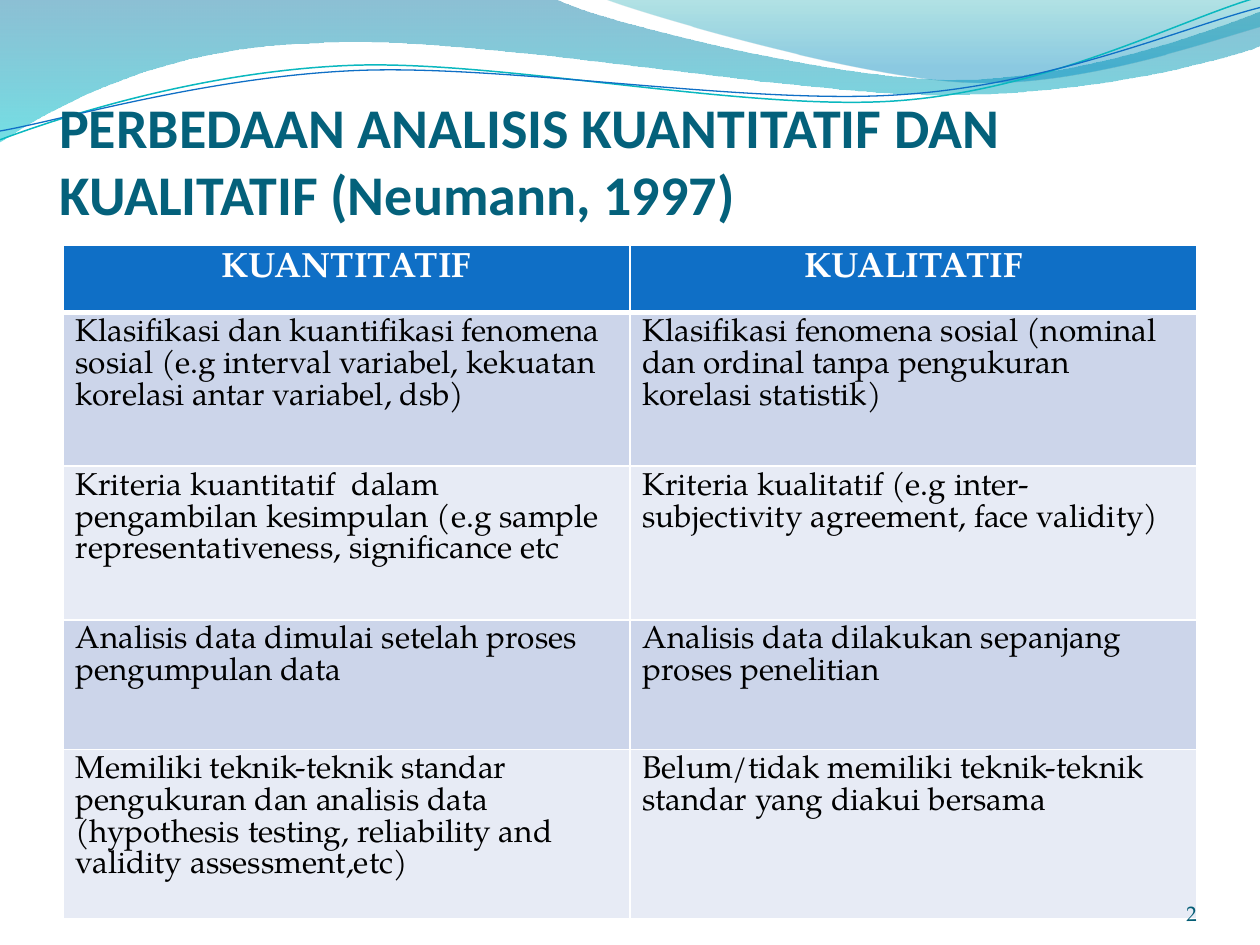
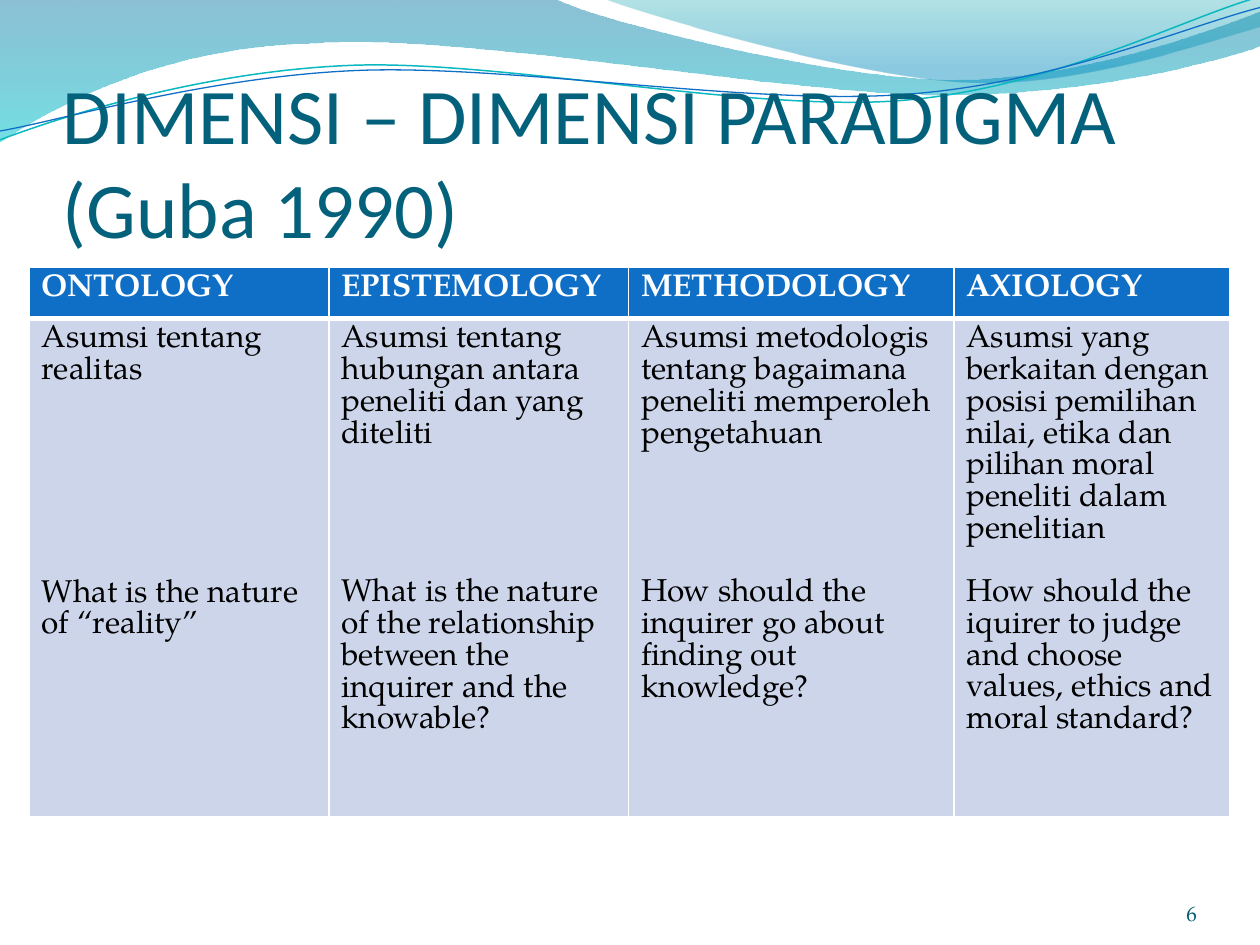
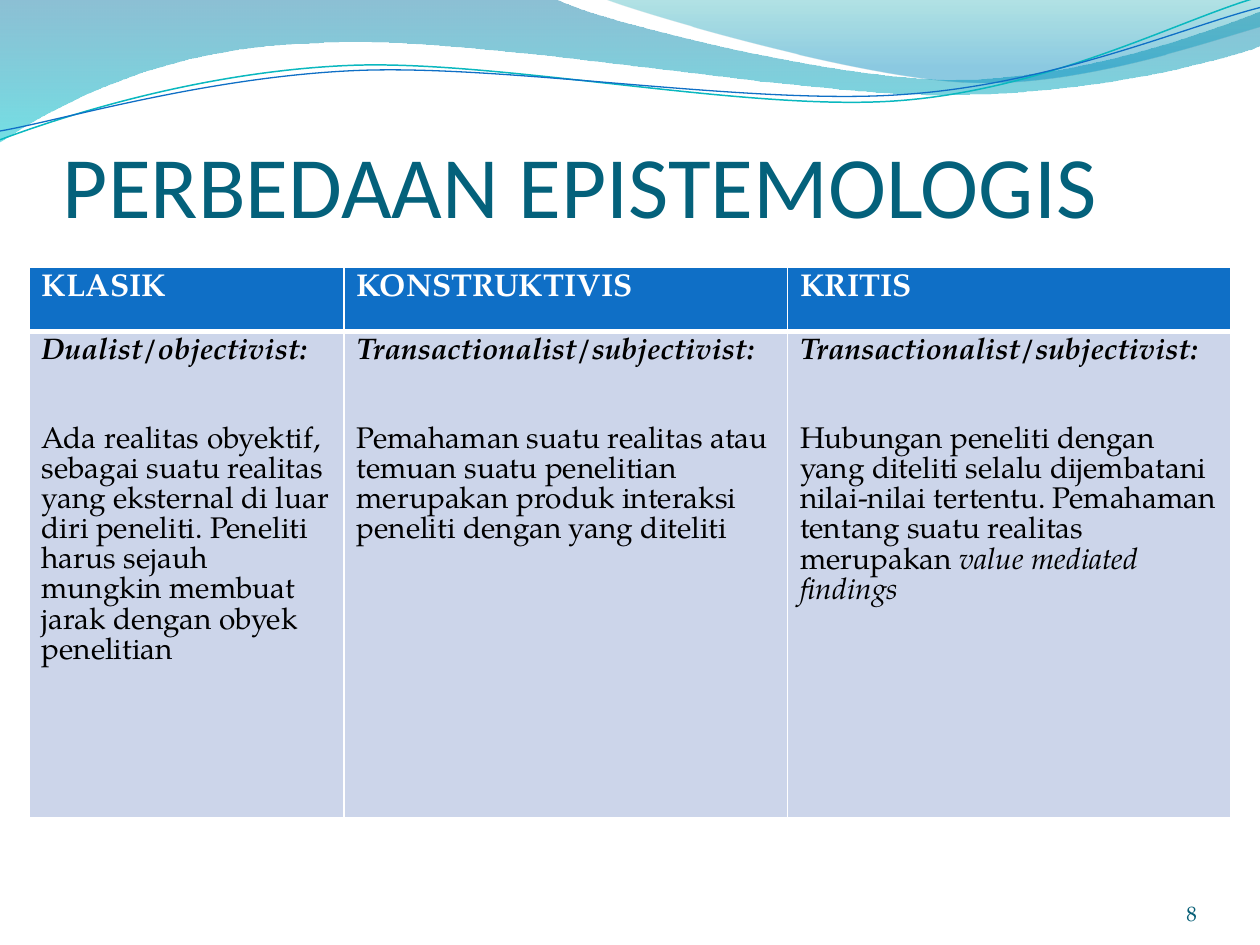
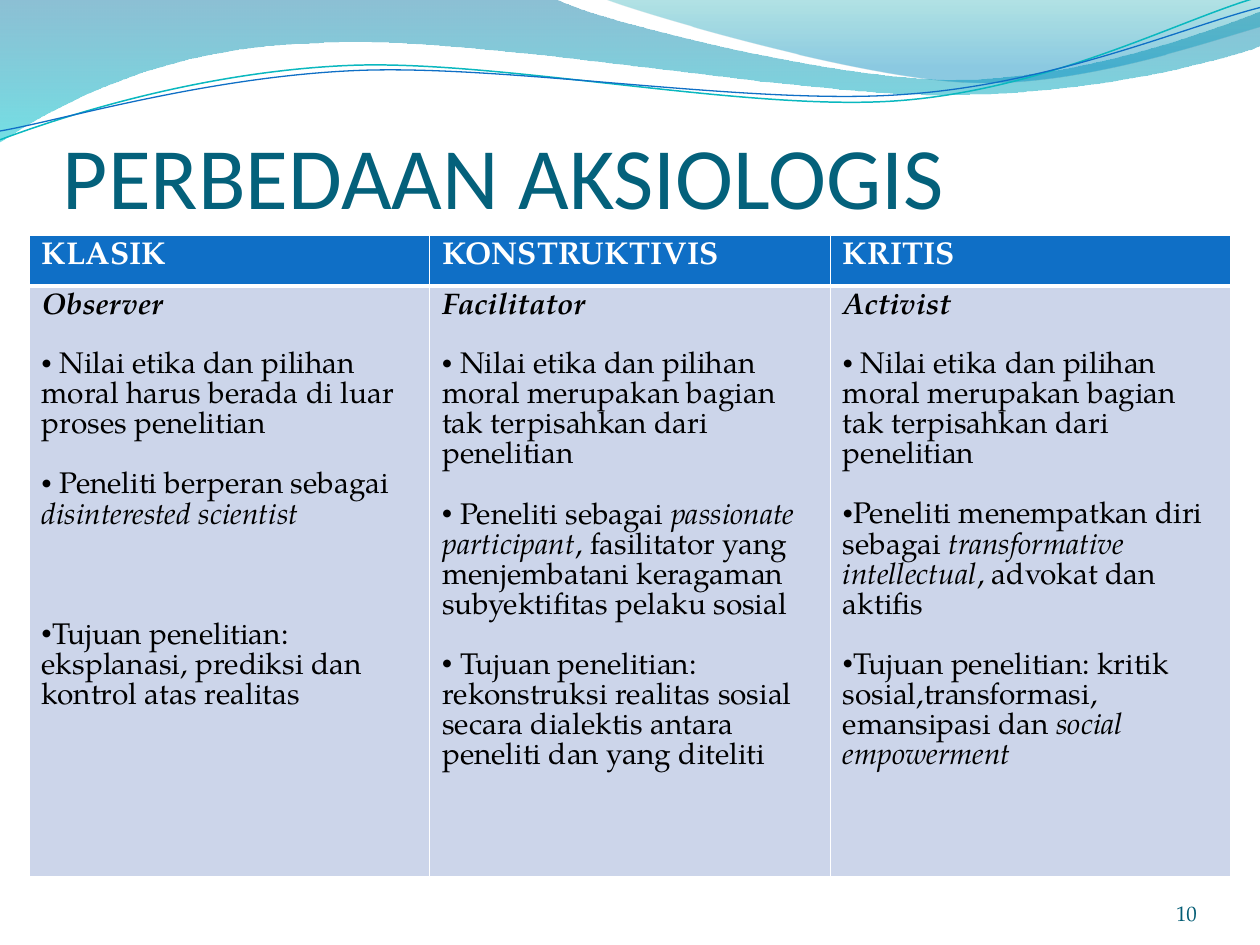
import dataclasses
import itertools

import lxml.etree
import pptx
import pptx.dml.color
import pptx.enum.text
import pptx.oxml.ns
import pptx.util

Inches = pptx.util.Inches
Pt = pptx.util.Pt
qn = pptx.oxml.ns.qn
ANCHOR_BOTTOM = pptx.enum.text.MSO_ANCHOR.BOTTOM
ALIGN = pptx.enum.text.PP_ALIGN


@dataclasses.dataclass(frozen=True)
class Theme:
    title_font: str = "Calibri"
    body_font: str = "TeX Gyre Pagella"
    bullet_font: str = "OpenSymbol"
    title_color: str = "04617B"
    number_color: str = "045D75"
    header_fill: str = "0F6FC6"
    band_fills: tuple = ("CCD5EA", "E7EBF5")
    white: str = "FFFFFF"
    black: str = "000000"
    teal_line: str = "0AB8BF"
    blue_line: str = "0F6FC6"
    wave_gradient: tuple = (("0074A1", 0, 45), ("00C6CF", 1, 55))
    crest_gradient: tuple = (("00A1A9", 0, 30), ("008BBF", 0.8, 45))
    number_size: int = 12
    body_size: int = 18
    dense_size: int = 17
    line_height: float = 1.01
    thin_border: int = 1
    thick_border: int = 3


@dataclasses.dataclass(frozen=True)
class Entry:
    text: str
    lines_before: int = 0
    bullet: bool = False
    lead: bool = False


WAVE = [
    [(0, 0)],
    [(4.4, -0.01)],
    [(4.76, 0.17), (6.64, 0.63), (7.58, 0.63)],
    [(8.53, 0.63), (9.58, 0.26), (10, 0.09)],
    [(10.01, 0.36)],
    [(9.83, 0.44), (8.7, 0.76), (7.46, 0.75)],
    [(6.22, 0.75), (3.82, 0.28), (2.57, 0.34)],
    [(1.29, 0.36), (0.46, 0.83), (-0.01, 1.13)],
    [(0, 0)],
]
CREST = [
    [(4.79, -0.01)],
    [(5.09, 0.11), (6.82, 0.62), (7.69, 0.65)],
    [(8.56, 0.69), (9.61, 0.32), (10, 0.21)],
    [(10, 0)],
    [(4.79, -0.01)],
]
TEAL_CURVE = [
    [(0, 1.11)],
    [(0.48, 0.93), (1.58, 0.57), (2.77, 0.52)],
    [(3.95, 0.47), (5.93, 0.89), (7.13, 0.8)],
    [(8.33, 0.71), (9.38, 0.15), (9.98, -0.02)],
]
BLUE_CURVE = [
    [(0, 1.04)],
    [(0.47, 0.96), (1.64, 0.61), (2.83, 0.56)],
    [(4.03, 0.51), (5.97, 0.84), (7.17, 0.75)],
    [(8.36, 0.67), (9.41, 0.21), (10, 0.06)],
]


def set_values(target, values):
    for name, value in values.items():
        setattr(target, name, value)


def rgb(color):
    return pptx.dml.color.RGBColor.from_string(color)


class Deck:
    def __init__(self, theme):
        self.theme = theme
        self.presentation = pptx.Presentation()
        set_values(self.presentation, {"slide_width": Inches(10), "slide_height": Inches(7.5)})
        self.slide = None

    def add_slide(self, title, title_box, title_size, bold=False):
        theme = self.theme
        self.slide = self.presentation.slides.add_slide(self.presentation.slide_layouts[6])
        self.gradient_band(WAVE, theme.wave_gradient)
        self.gradient_band(CREST, theme.crest_gradient)
        self.curve(TEAL_CURVE, theme.teal_line, 0.85)
        self.curve(BLUE_CURVE, theme.blue_line, 0.75)
        self.text_box(title, title_box, 0.05, ALIGN.LEFT, theme.title_color,
                      {"size": Pt(title_size), "name": theme.title_font, "bold": bold})

    def slide_number(self, number):
        self.text_box(number, (8.67, 6.95, 0.83, 0.4), 0, ALIGN.RIGHT, self.theme.number_color,
                      {"size": Pt(self.theme.number_size), "name": self.theme.body_font})

    def freeform(self, outline, close):
        corners = [tuple(map(Inches, segment[-1])) for segment in outline]
        builder = self.slide.shapes.build_freeform(*corners[0], scale=1.0)
        builder.add_line_segments(corners[1:], close=close)
        shape = builder.convert_to_shape()
        shape.shadow.inherit = False
        straight_parts = list(shape._element.spPr.iter(qn("a:lnTo")))
        for part, segment in zip(straight_parts, outline[1:]):
            if len(segment) == 3:
                self.bend(shape, part, segment)
        return shape

    def bend(self, shape, part, controls):
        part.clear()
        bezier = lxml.etree.Element(qn("a:cubicBezTo"))
        for x, y in controls:
            lxml.etree.SubElement(bezier, qn("a:pt"),
                                  x=str(Inches(x) - shape.left), y=str(Inches(y) - shape.top))
        part.getparent().replace(part, bezier)

    def gradient_band(self, outline, gradient):
        shape = self.freeform(outline, True)
        shape.line.fill.background()
        shape.fill.gradient()
        shape.fill.gradient_angle = 270
        for stop, (color, position, _) in zip(shape.fill.gradient_stops, gradient):
            stop.color.rgb = rgb(color)
            stop.position = position
        colors = shape._element.spPr.iter(qn("a:srgbClr"))
        for element, (_, _, opacity) in zip(colors, gradient):
            lxml.etree.SubElement(element, qn("a:alpha")).set("val", str(opacity * 1000))

    def curve(self, outline, color, width):
        shape = self.freeform(outline, False)
        shape.fill.background()
        shape.line.color.rgb = rgb(color)
        shape.line.width = Pt(width)

    def text_box(self, text, box, top_inset, alignment, color, font):
        shape = self.slide.shapes.add_textbox(*map(Inches, box))
        set_values(shape.text_frame, {
            "word_wrap": True, "vertical_anchor": ANCHOR_BOTTOM,
            "margin_left": 0, "margin_right": 0, "margin_bottom": 0,
            "margin_top": Inches(top_inset),
        })
        paragraph = shape.text_frame.paragraphs[0]
        paragraph.alignment = alignment
        self.add_run(paragraph, text, color, font)

    def add_run(self, paragraph, text, color, font):
        run = paragraph.add_run()
        run.text = text
        set_values(run.font, font)
        run.font.color.rgb = rgb(color)

    def table(self, box, widths, heights, header, rows, size,
              header_size=None, header_alignment=ALIGN.LEFT):
        theme = self.theme
        frame = self.slide.shapes.add_table(len(heights), len(widths), *map(Inches, box))
        table = frame.table
        for column, width in zip(table.columns, widths):
            column.width = Inches(width)
        for row, height in zip(table.rows, heights):
            row.height = Inches(height)
        frame.height = Inches(box[3])
        for column, text in enumerate(header):
            cell = table.cell(0, column)
            self.style_cell(cell, theme.header_fill, bottom=theme.thick_border)
            self.fill_cell(cell, [Entry(text)], header_size or theme.body_size,
                           theme.white, True, header_alignment)
        for index, (contents, fill) in enumerate(zip(rows, itertools.cycle(theme.band_fills)), 1):
            top_border = theme.thick_border if index == 1 else theme.thin_border
            for column, entries in enumerate(contents):
                cell = table.cell(index, column)
                self.style_cell(cell, fill, top=top_border)
                self.fill_cell(cell, entries, size, theme.black, False, ALIGN.LEFT)

    def style_cell(self, cell, fill, top=None, bottom=None):
        thin = self.theme.thin_border
        properties = cell._tc.get_or_add_tcPr()
        borders = {"lnL": thin, "lnR": thin, "lnT": top or thin, "lnB": bottom or thin}
        for side, width in borders.items():
            line = lxml.etree.SubElement(properties, qn("a:" + side), w=str(Pt(width)))
            solid = lxml.etree.SubElement(line, qn("a:solidFill"))
            lxml.etree.SubElement(solid, qn("a:srgbClr"), val=self.theme.white)
        cell.fill.solid()
        cell.fill.fore_color.rgb = rgb(fill)

    def fill_cell(self, cell, entries, size, color, bold, alignment):
        frame = cell.text_frame
        for index, entry in enumerate(entries):
            paragraph = frame.add_paragraph() if index else frame.paragraphs[0]
            paragraph.alignment = alignment
            if entry.lines_before:
                paragraph.space_before = Pt(
                    round(entry.lines_before * size * self.theme.line_height, 1))
            if entry.bullet:
                self.add_bullet(paragraph)
            for position, part in enumerate(entry.text.split("_")):
                if part:
                    self.add_run(paragraph, part, color, {
                        "size": Pt(size), "name": self.theme.body_font,
                        "bold": bold or entry.lead,
                        "italic": entry.lead or position % 2 == 1,
                    })

    def add_bullet(self, paragraph):
        properties = paragraph._p.get_or_add_pPr()
        properties.set("marL", "0")
        properties.set("indent", "0")
        lxml.etree.SubElement(properties, qn("a:buFont"), typeface=self.theme.bullet_font)
        lxml.etree.SubElement(properties, qn("a:buChar"), char="•")


def lead(text):
    return Entry(text, lead=True)


def bullet(text, lines_before=1):
    return Entry(text, lines_before, bullet=True)


def add_analysis_slide(deck):
    deck.add_slide("PERBEDAAN ANALISIS KUANTITATIF DAN KUALITATIF (Neumann, 1997)",
                   (0.47, 0.55, 9, 1.25), 32, bold=True)
    differences = [
        ("Klasifikasi dan kuantifikasi fenomena sosial (e.g interval variabel, "
         "kekuatan korelasi antar variabel, dsb)",
         "Klasifikasi fenomena sosial (nominal dan ordinal tanpa pengukuran korelasi statistik)"),
        ("Kriteria kuantitatif  dalam pengambilan kesimpulan (e.g sample "
         "representativeness, significance etc",
         "Kriteria kualitatif (e.g inter-subjectivity agreement, face validity)"),
        ("Analisis data dimulai setelah proses pengumpulan data",
         "Analisis data dilakukan sepanjang proses penelitian"),
        ("Memiliki teknik-teknik standar pengukuran dan analisis data "
         "(hypothesis testing, reliability and validity assessment,etc)",
         "Belum/tidak memiliki teknik-teknik standar yang diakui bersama"),
    ]
    rows = [[[Entry(text)] for text in pair] for pair in differences]
    deck.table((0.5, 1.95, 9, 5.35), [4.5] * 2, [0.53, 1.22, 1.22, 1.03, 1.34],
               ["KUANTITATIF", "KUALITATIF"], rows, deck.theme.body_size,
               header_size=20, header_alignment=ALIGN.CENTER)
    deck.slide_number("2")


def add_dimension_slide(deck):
    deck.add_slide("DIMENSI – DIMENSI PARADIGMA (Guba 1990)", (0.5, 0.77, 9, 1.25), 45)
    dimensions = [
        ("Asumsi tentang realitas", 6, "What is the nature of “reality”"),
        ("Asumsi tentang hubungan antara peneliti dan yang diteliti", 4,
         "What is the nature of the relationship between the inquirer and the knowable?"),
        ("Asumsi metodologis tentang bagaimana peneliti memperoleh pengetahuan", 4,
         "How should the inquirer go about finding out knowledge?"),
        ("Asumsi yang berkaitan dengan posisi pemilihan nilai, etika dan pilihan moral "
         "peneliti dalam penelitian", 1,
         "How should the iquirer to judge and choose values, ethics and moral standard?"),
    ]
    row = [[Entry(assumption), Entry(question, gap)] for assumption, gap, question in dimensions]
    deck.table((0.23, 2.12, 9.53, 4.41), [2.38, 2.38, 2.58, 2.19], [0.41] * 2,
               ["ONTOLOGY", "EPISTEMOLOGY", "METHODOLOGY", "AXIOLOGY"],
               [row], deck.theme.body_size)
    deck.slide_number("6")


PARADIGMS = ["KLASIK", "KONSTRUKTIVIS", "KRITIS"]


def add_epistemology_slide(deck):
    deck.add_slide("PERBEDAAN EPISTEMOLOGIS", (0.5, 0.77, 9, 1.1), 50)
    positions = [
        ("Dualist/objectivist:",
         "Ada realitas obyektif, sebagai suatu realitas yang eksternal di luar diri peneliti. "
         "Peneliti harus sejauh mungkin membuat jarak dengan obyek penelitian"),
        ("Transactionalist/subjectivist:",
         "Pemahaman suatu realitas atau temuan suatu penelitian merupakan produk interaksi "
         "peneliti dengan yang diteliti"),
        ("Transactionalist/subjectivist:",
         "Hubungan peneliti dengan yang diteliti selalu dijembatani nilai-nilai tertentu. "
         "Pemahaman tentang suatu realitas merupakan _value mediated findings_"),
    ]
    row = [[lead(stance), Entry(view, 2)] for stance, view in positions]
    deck.table((0.23, 2.12, 9.53, 4.37), [2.5, 3.52, 3.52], [0.51, 3.86], PARADIGMS, [row],
               deck.theme.dense_size)
    deck.slide_number("8")


def add_axiology_slide(deck):
    deck.add_slide("PERBEDAAN AKSIOLOGIS", (0.5, 0.77, 9, 1.03), 50)
    shared_ethics = bullet(
        " Nilai etika dan pilihan moral merupakan bagian tak terpisahkan dari penelitian")
    row = [
        [lead("Observer"),
         bullet(" Nilai etika dan pilihan moral harus berada di luar proses penelitian"),
         bullet(" Peneliti berperan sebagai _disinterested scientist_"),
         bullet("Tujuan penelitian: eksplanasi, prediksi dan kontrol atas realitas", 3)],
        [lead("Facilitator"),
         shared_ethics,
         bullet(" Peneliti sebagai _passionate participant_, fasilitator yang menjembatani "
                "keragaman subyektifitas pelaku sosial"),
         bullet(" Tujuan penelitian: rekonstruksi realitas sosial secara dialektis antara "
                "peneliti dan yang diteliti")],
        [lead("Activist"),
         shared_ethics,
         bullet("Peneliti menempatkan diri sebagai _transformative intellectual_, "
                "advokat dan aktifis"),
         bullet("Tujuan penelitian: kritik sosial,transformasi, emansipasi dan "
                "_social empowerment_")],
    ]
    deck.table((0.23, 1.87, 9.53, 5.09), [3.18] * 3, [0.39, 4.69], PARADIGMS, [row],
               deck.theme.dense_size)
    deck.slide_number("10")


def main():
    deck = Deck(Theme())
    add_analysis_slide(deck)
    add_dimension_slide(deck)
    add_epistemology_slide(deck)
    add_axiology_slide(deck)
    deck.presentation.save("out.pptx")


if __name__ == "__main__":
    main()
